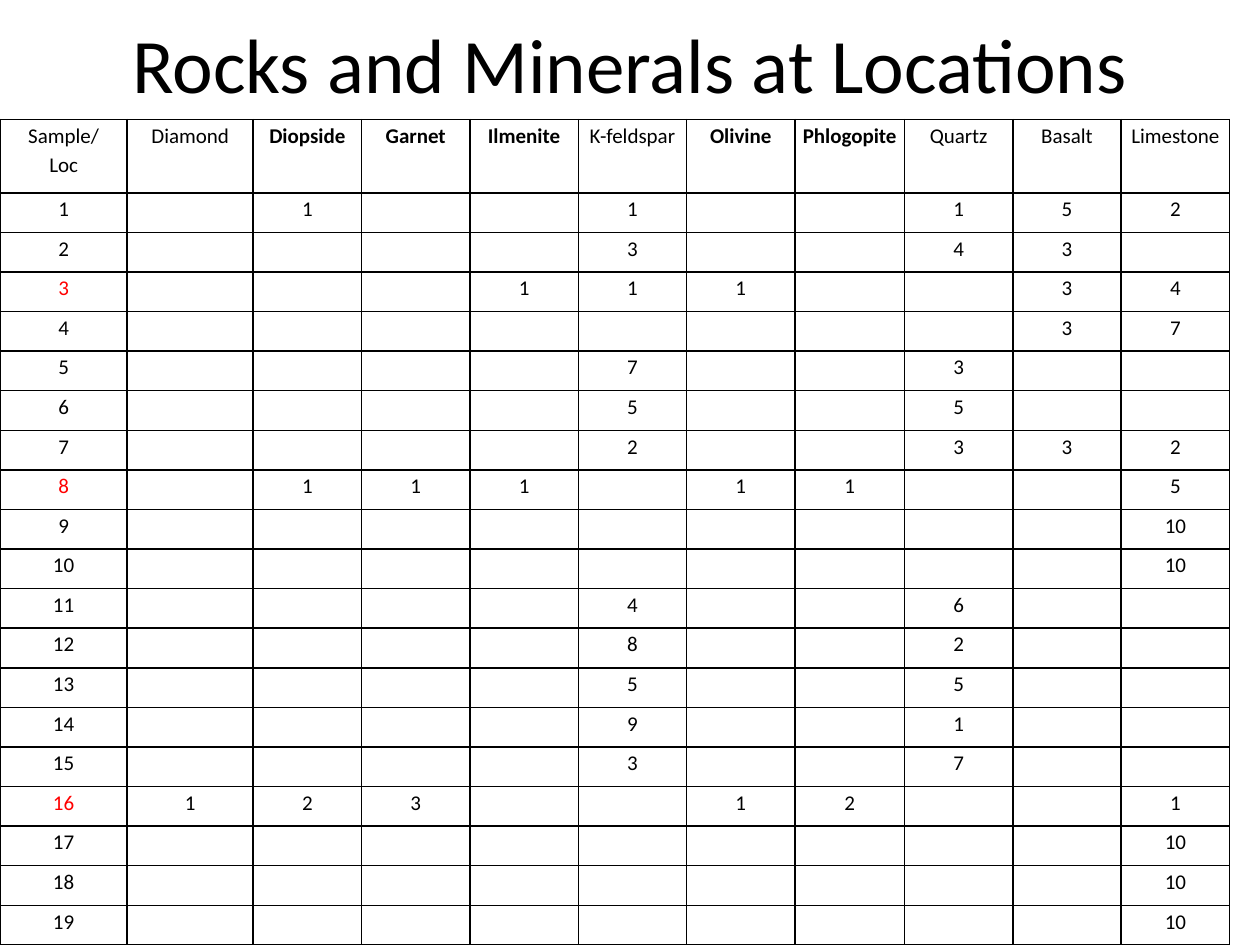
from lxml.etree import SubElement
from pptx import Presentation
from pptx.dml.color import RGBColor
from pptx.enum.text import MSO_ANCHOR as Anchor, PP_ALIGN as Align
from pptx.oxml.ns import qn
from pptx.util import Inches, Pt

MINERALS = ["Diamond", "Diopside", "Garnet", "Ilmenite", "K-feldspar", "Olivine",
            "Phlogopite", "Quartz", "Basalt", "Limestone"]
INDICATORS = {"Diopside", "Garnet", "Ilmenite", "Olivine", "Phlogopite"}
RED_LOCATIONS = {3, 8, 16}
COUNTS = {
    1: {"Diopside": 1, "K-feldspar": 1, "Quartz": 1, "Basalt": 5, "Limestone": 2},
    2: {"K-feldspar": 3, "Quartz": 4, "Basalt": 3},
    3: {"Ilmenite": 1, "K-feldspar": 1, "Olivine": 1, "Basalt": 3, "Limestone": 4},
    4: {"Basalt": 3, "Limestone": 7},
    5: {"K-feldspar": 7, "Quartz": 3},
    6: {"K-feldspar": 5, "Quartz": 5},
    7: {"K-feldspar": 2, "Quartz": 3, "Basalt": 3, "Limestone": 2},
    8: {"Diopside": 1, "Garnet": 1, "Ilmenite": 1, "Olivine": 1, "Phlogopite": 1,
        "Limestone": 5},
    9: {"Limestone": 10},
    10: {"Limestone": 10},
    11: {"K-feldspar": 4, "Quartz": 6},
    12: {"K-feldspar": 8, "Quartz": 2},
    13: {"K-feldspar": 5, "Quartz": 5},
    14: {"K-feldspar": 9, "Quartz": 1},
    15: {"K-feldspar": 3, "Quartz": 7},
    16: {"Diamond": 1, "Diopside": 2, "Garnet": 3, "Olivine": 1, "Phlogopite": 2,
         "Limestone": 1},
    17: {"Limestone": 10},
    18: {"Limestone": 10},
    19: {"Limestone": 10},
}


def rgb(color):
    return RGBColor.from_string(color)


class Deck:
    font = "Calibri"
    ink = "000000"
    accent = "FF0000"

    def __init__(self, width, height):
        self.prs = Presentation()
        self.prs.slide_width, self.prs.slide_height = Inches(width), Inches(height)
        self.s = self.prs.slides.add_slide(self.prs.slide_layouts[6])

    def x(self, share):
        return round(self.prs.slide_width * share)

    def y(self, share):
        return round(self.prs.slide_height * share)

    def add_text(self, p, text, size, color=None, bold=False):
        p.alignment = Align.CENTER
        r = p.add_run()
        r.text = text
        r.font.name, r.font.size, r.font.bold = self.font, Pt(size), bold
        r.font.color.rgb = rgb(color or self.ink)

    def title(self, text, left, top, width, height):
        sp = self.s.shapes.add_textbox(self.x(left), self.y(top), self.x(width), self.y(height))
        tf = sp.text_frame
        tf.word_wrap = True
        tf.vertical_anchor = Anchor.MIDDLE
        self.add_text(tf.paragraphs[0], text, 44)

    def table(self, left, top, cols, rows):
        frame = self.s.shapes.add_table(len(rows), len(cols), self.x(left), self.y(top),
                                        self.x(sum(cols)), self.y(sum(rows)))
        table = frame.table
        table.first_row = table.horz_banding = False
        for col, share in zip(table.columns, cols):
            col.width = self.x(share)
        for row, share in zip(table.rows, rows):
            row.height = self.y(share)
        for cell in table.iter_cells():
            self.style(cell)
        return table

    def style(self, cell):
        cell.margin_left = cell.margin_right = Inches(0.05)
        cell.margin_top = cell.margin_bottom = 0
        tcPr = cell._tc.get_or_add_tcPr()
        for side in ("lnL", "lnR", "lnT", "lnB"):
            ln = SubElement(tcPr, qn(f"a:{side}"), w=str(Pt(1)))
            fill = SubElement(ln, qn("a:solidFill"))
            SubElement(fill, qn("a:srgbClr"), val=self.ink)
        cell.fill.background()

    def entry(self, cell, lines, color=None, bold=False):
        tf = cell.text_frame
        for i, line in enumerate(lines):
            p = tf.add_paragraph() if i else tf.paragraphs[0]
            p.line_spacing = 1.15
            self.add_text(p, line, 12, color, bold)


def main():
    deck = Deck(10, 7.5)
    deck.title("Rocks and Minerals at Locations", 0.05, 0, 0.9, 1 / 7.5)

    top, header = 0.95 / 7.5, 0.58 / 7.5
    row = (1 - top - header) / len(COUNTS)
    cols = [0.101, 0.1] + [0.087 if m == "Phlogopite" else 0.086 for m in MINERALS[1:]]
    table = deck.table(0, top, cols, [header] + [row] * len(COUNTS))

    deck.entry(table.cell(0, 0), ["Sample/", "Loc"])
    for c, mineral in enumerate(MINERALS, 1):
        deck.entry(table.cell(0, c), [mineral], bold=mineral in INDICATORS)
    for r, (location, found) in enumerate(COUNTS.items(), 1):
        color = deck.accent if location in RED_LOCATIONS else deck.ink
        deck.entry(table.cell(r, 0), [str(location)], color)
        for mineral, count in found.items():
            deck.entry(table.cell(r, MINERALS.index(mineral) + 1), [str(count)])

    deck.prs.save("out.pptx")


if __name__ == "__main__":
    main()
